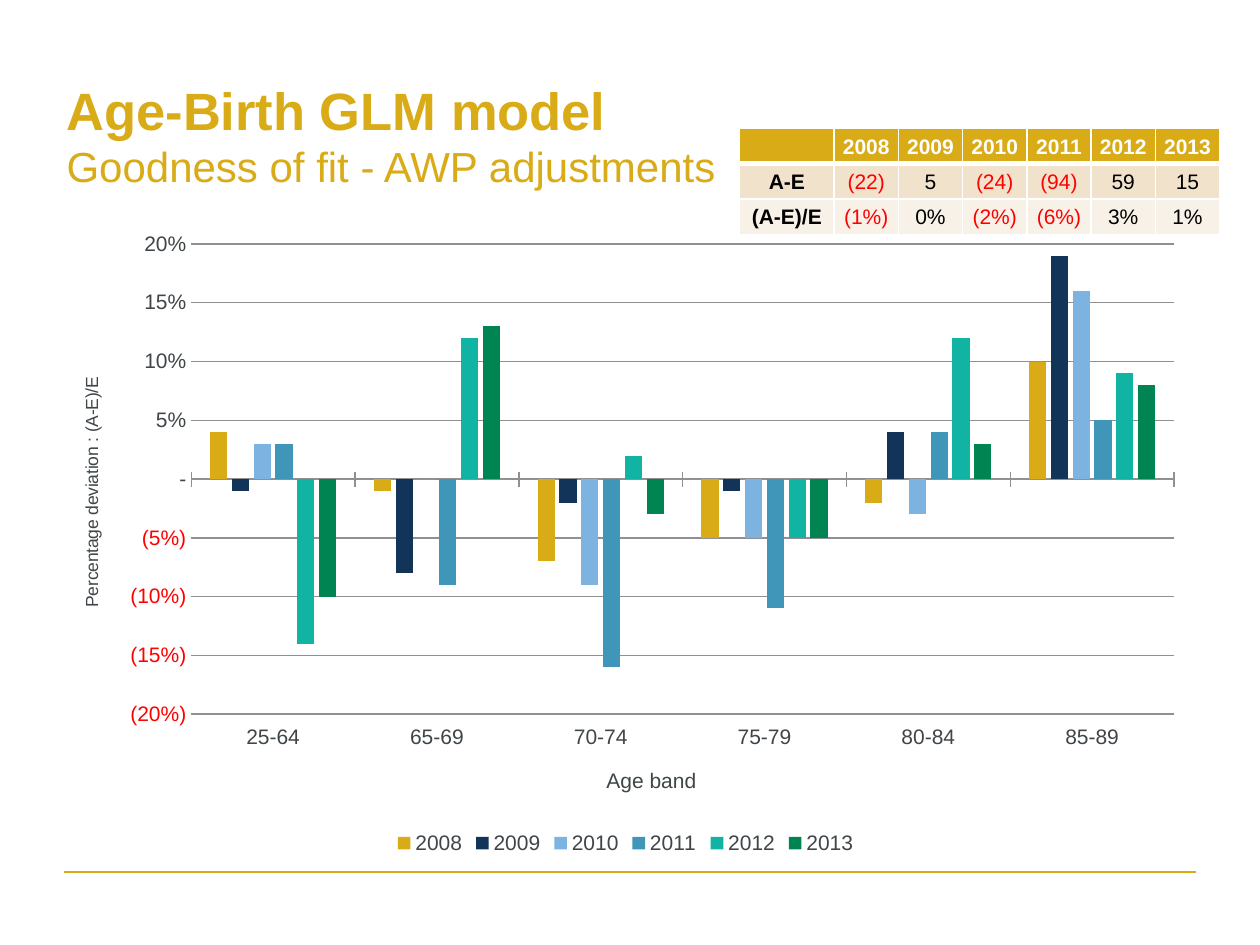
from lxml import etree
from pptx import Presentation
from pptx.chart.data import CategoryChartData
from pptx.dml.color import RGBColor
from pptx.enum.chart import XL_CHART_TYPE as ChartType, XL_LEGEND_POSITION as LegendPosition
from pptx.enum.chart import XL_TICK_LABEL_POSITION as LabelPosition, XL_TICK_MARK as TickMark
from pptx.enum.shapes import MSO_CONNECTOR as Connector
from pptx.enum.text import MSO_ANCHOR as Anchor, PP_ALIGN as Align
from pptx.oxml.ns import qn
from pptx.util import Inches, Pt

GOLD, GREY, GRID = "D9AB16", "3F4548", "8F9091"
WHITE, BLACK, RED = "FFFFFF", "000000", "FF0000"


def style_font(font, size, color, bold=False):
    font.name = "Arial"
    font.size = Pt(size)
    font.bold = bold
    font.color.rgb = RGBColor.from_string(color)


def place(element, index, **fractions):
    """Fix a chart part at fractions of the chart's width and height."""
    for old in element.findall(qn("c:layout")):
        element.remove(old)
    layout = etree.Element(qn("c:layout"))
    manual = etree.SubElement(layout, qn("c:manualLayout"))
    if "w" in fractions:
        etree.SubElement(manual, qn("c:layoutTarget"), val="inner")
    for name in ("xMode", "yMode"):
        etree.SubElement(manual, qn(f"c:{name}"), val="edge")
    for name, value in fractions.items():
        etree.SubElement(manual, qn(f"c:{name}"), val=str(value))
    element.insert(index, layout)


deck = Presentation()
deck.slide_width, deck.slide_height = Inches(10), Inches(7.5)
page = deck.slides.add_slide(deck.slide_layouts[6])

# Footer rule
rule = page.shapes.add_connector(
    Connector.STRAIGHT, Inches(0.51), Inches(6.92), Inches(9.49), Inches(6.92))
rule.line.color.rgb = RGBColor.from_string(GOLD)
rule.line.width = Pt(1)
etree.SubElement(rule._element.spPr, qn("a:effectLst"))

# Title
title = page.shapes.add_textbox(Inches(0.43), Inches(0.44), Inches(9.07), Inches(1.25))
title.text_frame.word_wrap = True
title.text_frame.vertical_anchor = Anchor.MIDDLE
para = title.text_frame.paragraphs[0]
span = para.add_run()
span.text = "Age-Birth GLM model"
style_font(span.font, 30, GOLD, bold=True)
para.add_line_break()
span = para.add_run()
span.text = "Goodness of fit - AWP adjustments"
style_font(span.font, 24, GOLD)

# Deviation by age band and year
series_values = {
    "2008": ("D9AB16", [0.04, -0.01, -0.07, -0.05, -0.02, 0.10]),
    "2009": ("113458", [-0.01, -0.08, -0.02, -0.01, 0.04, 0.19]),
    "2010": ("7CB3E1", [0.03, 0, -0.09, -0.05, -0.03, 0.16]),
    "2011": ("4096B8", [0.03, -0.09, -0.16, -0.11, 0.04, 0.05]),
    "2012": ("11B3A2", [-0.14, 0.12, 0.02, -0.05, 0.12, 0.09]),
    "2013": ("008452", [-0.10, 0.13, -0.03, -0.05, 0.03, 0.08]),
}
data = CategoryChartData(number_format="0%")
data.categories = ["25-64", "65-69", "70-74", "75-79", "80-84", "85-89"]
for year, (color, values) in series_values.items():
    data.add_series(year, values)
chart = page.shapes.add_chart(
    ChartType.COLUMN_CLUSTERED, Inches(0.43), Inches(1.75), Inches(9.07), Inches(5.07), data).chart
style_font(chart.font, 12, GREY)
chart.has_title = False
chart.has_legend = True
chart.legend.position = LegendPosition.BOTTOM
chart.legend.include_in_layout = False
style_font(chart.legend.font, 12, GREY)

plot = chart.plots[0]
plot.vary_by_categories = False
plot.gap_width, plot.overlap = 219, -27
for series, (color, values) in zip(plot.series, series_values.values()):
    series.format.fill.solid()
    series.format.fill.fore_color.rgb = RGBColor.from_string(color)
    series.invert_if_negative = False

ages, deviation = chart.category_axis, chart.value_axis
for axis, caption, size, left, top in (
        (ages, "Age band", 12, 0.48, 0.85),
        (deviation, "Percentage deviation : (A-E)/E", 10, 0.02, 0.24)):
    style_font(axis.tick_labels.font, 12, GREY)
    axis.minor_tick_mark = TickMark.NONE
    span = axis.axis_title.text_frame.paragraphs[0].add_run()
    span.text = caption
    style_font(span.font, size, GREY)
    place(axis.axis_title._element, 1, x=left, y=top)
ages.tick_label_position = LabelPosition.LOW
ages.major_tick_mark = TickMark.CROSS
deviation.major_tick_mark = TickMark.NONE
deviation.minimum_scale, deviation.maximum_scale = -0.2, 0.2
deviation.major_unit = 0.05
deviation.tick_labels.number_format = r"#,##0%;[Red]\(#,##0%\);\-"
deviation.tick_labels.number_format_is_linked = False
deviation.format.line.fill.background()
for line in (ages.format.line, deviation.major_gridlines.format.line):
    line.color.rgb = RGBColor.from_string(GRID)
    line.width = Pt(0.75)
place(chart._chartSpace.chart.plotArea, 0, x=0.12, y=0.037, w=0.86, h=0.736)

# Summary table
rows = [
    ["", *series_values],
    ["A-E", "(22)", "5", "(24)", "(94)", "59", "15"],
    ["(A-E)/E", "(1%)", "0%", "(2%)", "(6%)", "3%", "1%"],
]
row_fills = [GOLD, "F1E2CC", "F8F1E8"]
table = page.shapes.add_table(
    3, 7, Inches(5.87), Inches(1.02), Inches(3.82), Inches(0.83)).table
for index, column in enumerate(table.columns):
    column.width = Inches(0.51 if index else 0.75)
for row_index, (texts, row_fill) in enumerate(zip(rows, row_fills)):
    table.rows[row_index].height = Inches(0.28)
    for column_index, text in enumerate(texts):
        cell = table.cell(row_index, column_index)
        cell.vertical_anchor = Anchor.MIDDLE
        cell.margin_left = cell.margin_top = cell.margin_right = Inches(0.01)
        cell.margin_bottom = 0
        for side in "LRTB":
            heavy = (row_index, side) in ((0, "B"), (1, "T"))
            border = etree.SubElement(
                cell._tc.get_or_add_tcPr(), qn(f"a:ln{side}"), w=str(Pt(3 if heavy else 1)))
            paint = etree.SubElement(border, qn("a:solidFill"))
            etree.SubElement(paint, qn("a:srgbClr"), val=WHITE)
        cell.fill.solid()
        cell.fill.fore_color.rgb = RGBColor.from_string(row_fill)
        para = cell.text_frame.paragraphs[0]
        para.alignment = Align.CENTER
        header = row_index == 0
        negative = column_index > 0 and text.startswith("(")
        color = WHITE if header else RED if negative else BLACK
        if text:
            span = para.add_run()
            span.text = text
            style_font(span.font, 12, color, bold=header or column_index == 0)
        else:
            style_font(para.font, 12, color)

deck.save("out.pptx")
